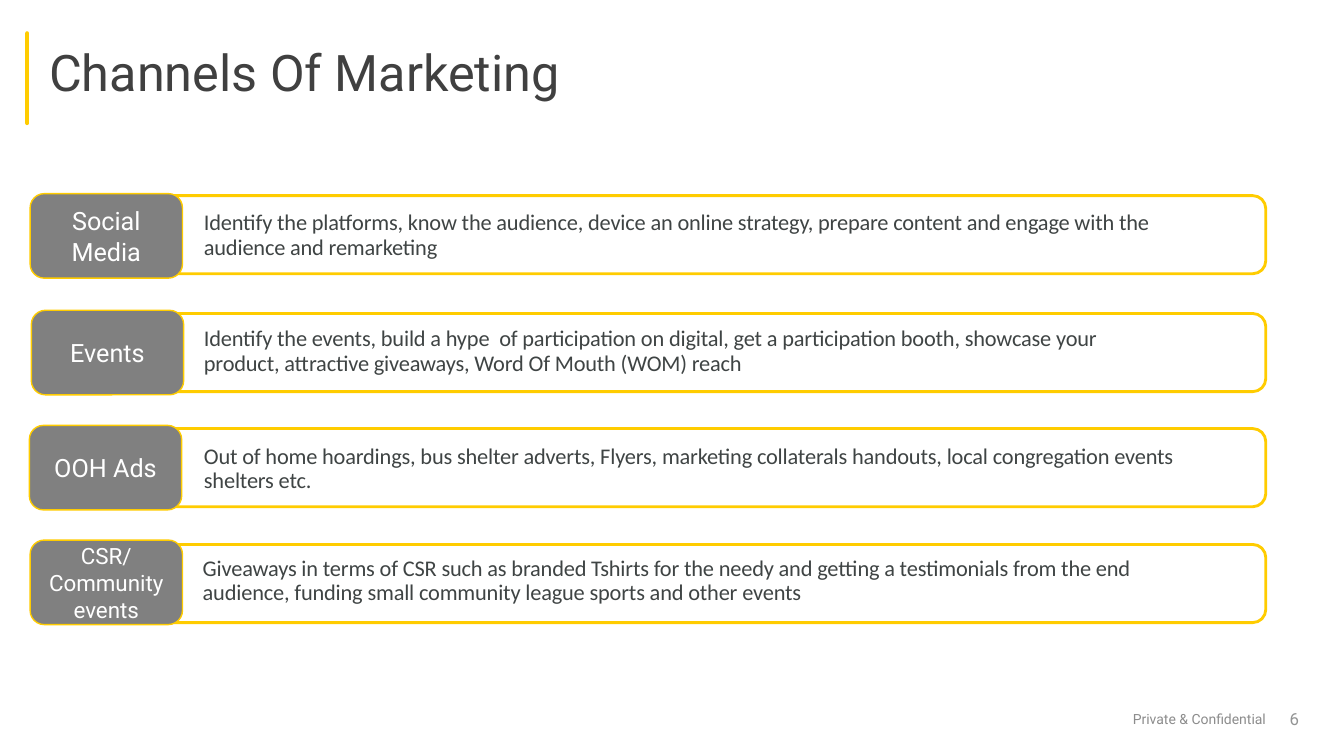
import math
from dataclasses import dataclass

import lxml.etree
import pptx
import pptx.dml.color
import pptx.enum.shapes
import pptx.enum.text
import pptx.oxml.ns
import pptx.util

Cm = pptx.util.Cm
Pt = pptx.util.Pt
ALIGN = pptx.enum.text.PP_ALIGN
ANCHOR = pptx.enum.text.MSO_ANCHOR


@dataclass(frozen=True)
class Theme:
    accent: str = "FFCC00"
    label_fill: str = "808080"
    label_text: str = "FFFFFF"
    title_text: str = "404040"
    body_text: str = "3F4444"
    footer_text: str = "8C8C8C"
    number_text: str = "939494"
    heading_font: str = "Roboto"
    body_font: str = "Calibri"
    title_size: float = 36
    label_size: float = 18
    small_label_size: float = 16
    body_size: float = 16
    number_size: float = 12
    footer_size: float = 10


def rgb(value):
    return pptx.dml.color.RGBColor.from_string(value)


def write(frame, text, *, font, size, color, align=ALIGN.LEFT,
          anchor=ANCHOR.MIDDLE, line_spacing=None, tracking=None,
          indent=None, insets=None, grow=False):
    """Fill a text frame with one formatted paragraph."""
    frame.word_wrap = True
    frame.vertical_anchor = anchor
    if grow:
        frame.auto_size = pptx.enum.text.MSO_AUTO_SIZE.SHAPE_TO_FIT_TEXT
    if insets:
        (frame.margin_left, frame.margin_top,
         frame.margin_right, frame.margin_bottom) = map(Cm, insets)
    para = frame.paragraphs[0]
    para.alignment = align
    if line_spacing:
        para.line_spacing = line_spacing
    if indent is not None:
        properties = para._p.get_or_add_pPr()
        properties.set("marL", str(Cm(indent)))
        properties.set("indent", "0")
    span = para.add_run()
    span.text = text
    span.font.name = font
    span.font.size = Pt(size)
    span.font.color.rgb = rgb(color)
    if tracking is not None:
        span._r.get_or_add_rPr().set("spc", str(round(tracking * 100)))


class SlideBuilder:
    def __init__(self, page, theme):
        self.page = page
        self.theme = theme

    def text(self, left, top, width, height, text, **style):
        box = self.page.shapes.add_textbox(Cm(left), Cm(top), Cm(width), Cm(height))
        write(box.text_frame, text, **style)

    def heading_text(self, left, top, width, height, text, **style):
        self.text(left, top, width, height, text,
                  font=self.theme.heading_font, **style)

    def accent_line(self, x, top, bottom):
        line = self.page.shapes.add_connector(
            pptx.enum.shapes.MSO_CONNECTOR.STRAIGHT, Cm(x), Cm(top), Cm(x), Cm(bottom))
        line.line.color.rgb = rgb(self.theme.accent)
        line.line.width = Pt(3)
        line.line._get_or_add_ln().set("cap", "rnd")
        lxml.etree.SubElement(line._element.spPr, pptx.oxml.ns.qn("a:effectLst"))

    def frame(self, left, top, width, height, radius=0.33, steps=4):
        """Outline with square left corners and rounded right corners."""
        right, bottom = left + width, top + height
        angles = [math.pi / 2 * step / steps for step in range(steps + 1)]
        upper = [(right - radius + radius * math.sin(angle),
                  top + radius - radius * math.cos(angle)) for angle in angles]
        lower = [(x, top + bottom - y) for x, y in reversed(upper)]
        points = [(Cm(x), Cm(y)) for x, y in upper + lower + [(left, bottom)]]
        builder = self.page.shapes.build_freeform(Cm(left), Cm(top), scale=1.0)
        builder.add_line_segments(points, close=True)
        outline = builder.convert_to_shape()
        outline.shadow.inherit = False
        outline.fill.background()
        outline.line.color.rgb = rgb(self.theme.accent)
        outline.line.width = Pt(2.04)

    def label(self, left, top, width, height, text, size):
        box = self.page.shapes.add_shape(
            pptx.enum.shapes.MSO_SHAPE.ROUNDED_RECTANGLE,
            Cm(left), Cm(top), Cm(width), Cm(height))
        box.shadow.inherit = False
        box.fill.solid()
        box.fill.fore_color.rgb = rgb(self.theme.label_fill)
        box.line.color.rgb = rgb(self.theme.accent)
        box.line.width = Pt(1)
        write(box.text_frame, text, font=self.theme.heading_font, size=size,
              color=self.theme.label_text, align=ALIGN.CENTER)

    def description(self, left, top, width, height, text):
        self.text(left, top, width, height, text, font=self.theme.body_font,
                  size=self.theme.body_size, color=self.theme.body_text,
                  anchor=ANCHOR.TOP, line_spacing=Pt(17.5), tracking=-0.1,
                  indent=0.03, insets=(0, 0.1, 0, 0), grow=True)


def main():
    theme = Theme()
    deck = pptx.Presentation()
    deck.slide_width, deck.slide_height = Cm(33.87), Cm(19.05)
    page = deck.slides.add_slide(deck.slide_layouts[6])
    builder = SlideBuilder(page, theme)

    # Title and footer
    builder.accent_line(0.69, 0.84, 3.1)
    builder.heading_text(28.3, 17.78, 4.04, 0.69, "Private & Confidential",
                         size=theme.footer_size, color=theme.footer_text, grow=True)
    builder.heading_text(0.99, 0.74, 23.93, 2.29, "Channels Of Marketing",
                         size=theme.title_size, color=theme.title_text, line_spacing=0.9)
    builder.heading_text(29.97, 17.6, 3.02, 1.02, "6", size=theme.number_size,
                         color=theme.number_text, align=ALIGN.RIGHT)

    # Channels: name, name size, label left, tops of frame, label and text, text left, text
    channels = [
        ("Social Media", theme.label_size, 0.76, 4.93, 4.88, 5.21, 5.11,
         "Identify the platforms, know the audience, device an online strategy, "
         "prepare content and engage with the audience and remarketing"),
        ("Events", theme.label_size, 0.79, 7.9, 7.82, 8.13, 5.11,
         "Identify the events, build a hype  of participation on digital, get a "
         "participation booth, showcase your product, attractive giveaways, "
         "Word Of Mouth (WOM) reach"),
        ("OOH Ads", theme.label_size, 0.74, 10.8, 10.72, 11.1, 5.11,
         "Out of home hoardings, bus shelter adverts, Flyers, marketing "
         "collaterals handouts, local congregation events shelters etc."),
        ("CSR/Community events", theme.small_label_size, 0.76, 13.72, 13.61, 13.92, 5.08,
         "Giveaways in terms of CSR such as branded Tshirts for the needy and "
         "getting a testimonials from the end audience, funding small community "
         "league sports and other events"),
    ]
    for name, size, label_left, frame_top, label_top, text_top, text_left, text in channels:
        builder.frame(4.39, frame_top, 27.51, 1.97)
        builder.label(label_left, label_top, 3.84, 2.13, name, size)
        builder.description(text_left, text_top, 24.51, 1.4, text)

    deck.save("out.pptx")


if __name__ == "__main__":
    main()
